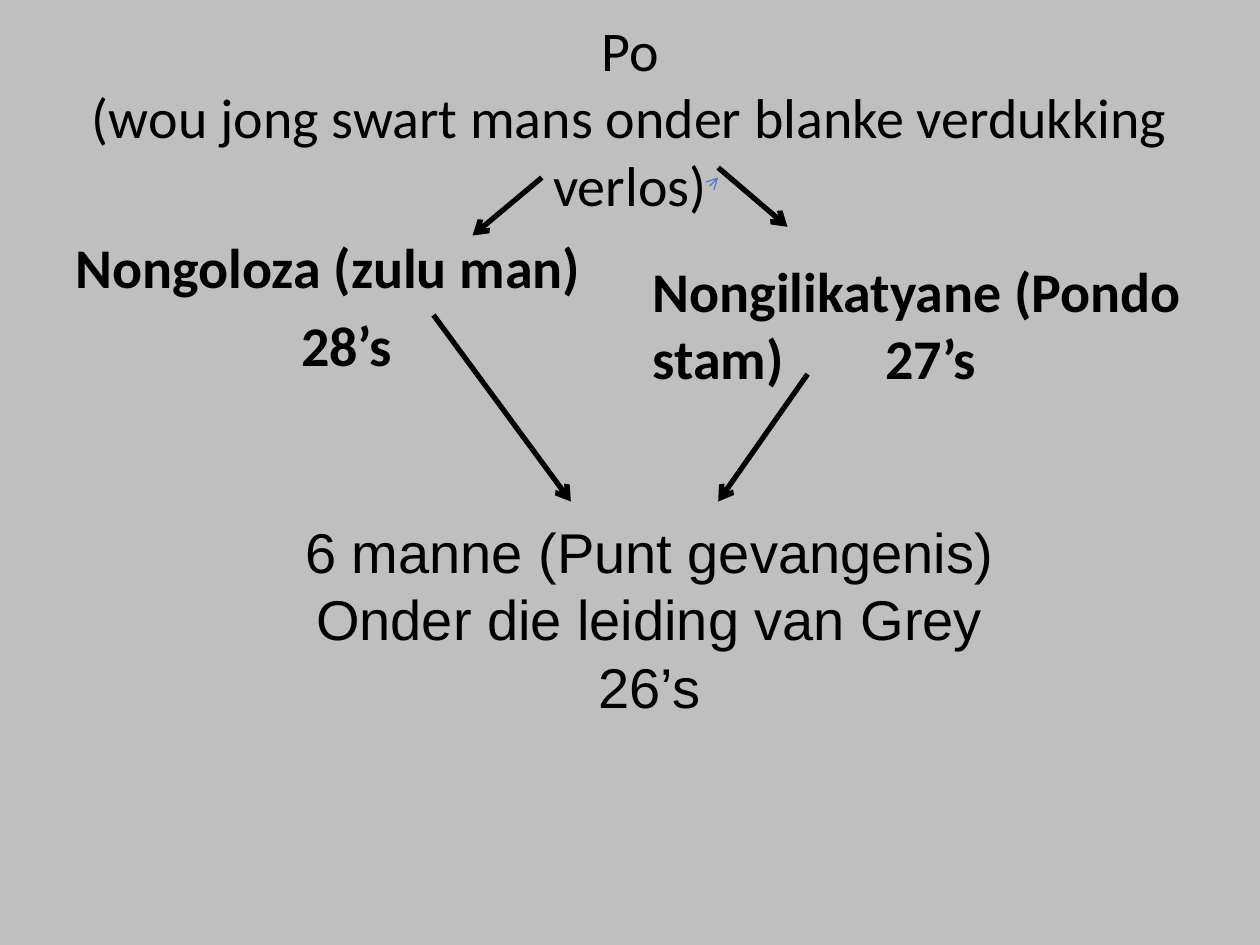
from pptx import Presentation
from pptx import util as u
from pptx.dml import color
from pptx.enum import shapes, text
from pptx.oxml import ns
from lxml import etree

Pt = u.Pt
LEFT, CENTER = text.PP_ALIGN.LEFT, text.PP_ALIGN.CENTER
TOP, MIDDLE, BOTTOM = (text.MSO_ANCHOR.TOP, text.MSO_ANCHOR.MIDDLE,
                       text.MSO_ANCHOR.BOTTOM)


def rgb(value):
    return color.RGBColor.from_string(value)


class Deck:
    ink, paper, size = "000000", "BFBFBF", 32

    def __init__(self, width, height):
        self.prs = Presentation()
        self.prs.slide_width, self.prs.slide_height = Pt(width), Pt(height)
        self.s = self.prs.slides.add_slide(self.prs.slide_layouts[6])
        fill = self.s.background.fill
        fill.solid()
        fill.fore_color.rgb = rgb(self.paper)

    def label(self, box, lines, font="Calibri", bold=False, anchor=TOP,
              before=0, bottom=3.6, tab=None):
        """Text box; lines is a list of (text, alignment)."""
        sp = self.s.shapes.add_textbox(*map(Pt, box))
        tf = sp.text_frame
        frame = {"word_wrap": True, "vertical_anchor": anchor,
                 "margin_bottom": Pt(bottom)}
        for name, value in frame.items():
            setattr(tf, name, value)
        for i, (words, align) in enumerate(lines):
            p = tf.paragraphs[0] if i == 0 else tf.add_paragraph()
            p.alignment, p.space_before = align, Pt(before)
            if tab:
                tabs = etree.SubElement(p._p.get_or_add_pPr(), ns.qn("a:tabLst"))
                etree.SubElement(tabs, ns.qn("a:tab"), pos=str(Pt(tab)), algn="l")
            for j, part in enumerate(words.split("\n")):
                if j:
                    p.add_line_break()
                r = p.add_run()
                r.text = part
                style = {"name": font, "size": Pt(self.size), "bold": bold}
                for name, value in style.items():
                    setattr(r.font, name, value)
                r.font.color.rgb = rgb(self.ink)

    def arrow(self, start, end, line=ink, width=3):
        c = self.s.shapes.add_connector(shapes.MSO_CONNECTOR.STRAIGHT,
                                        *map(Pt, start + end))
        c.line.color.rgb, c.line.width = rgb(line), Pt(width)
        etree.SubElement(c.line._get_or_add_ln(), ns.qn("a:tailEnd"), type="arrow")
        etree.SubElement(c._element.spPr, ns.qn("a:effectLst"))


def main():
    d = Deck(720, 540)

    # Title
    d.label((36, 21.6, 648, 90),
            [("Po\n(wou jong swart mans onder blanke verdukking verlos)", CENTER)],
            anchor=MIDDLE)

    # The two followers
    d.label((36, 121, 324, 98.6),
            [("Nongoloza (zulu man)", LEFT), ("28’s", CENTER)],
            bold=True, anchor=BOTTOM, before=6.4)
    d.label((365.8, 121, 318.2, 143.3),
            [("Nongilikatyane (Pondo stam)\t27’s", LEFT)],
            bold=True, anchor=BOTTOM, before=6.4, bottom=41, tab=133)

    # Third group
    d.label((50.4, 292.3, 641.5, 123.8),
            [(words, CENTER) for words in ("6 manne (Punt gevangenis)",
                                           "Onder die leiding van Grey", "26’s")],
            font="Arial")

    # Arrows from the title to the followers, then on to the third group
    d.arrow((309.6, 101.5), (270, 134.6))
    d.arrow((410.3, 101.6), (410.4, 101.5), "4B7EBC", 0.75)
    d.arrow((410.4, 95.8), (450, 129.6))
    d.arrow((247.7, 180), (326.2, 286.6))
    d.arrow((461.5, 213.8), (410.4, 286.6))

    d.prs.save("out.pptx")


if __name__ == "__main__":
    main()
